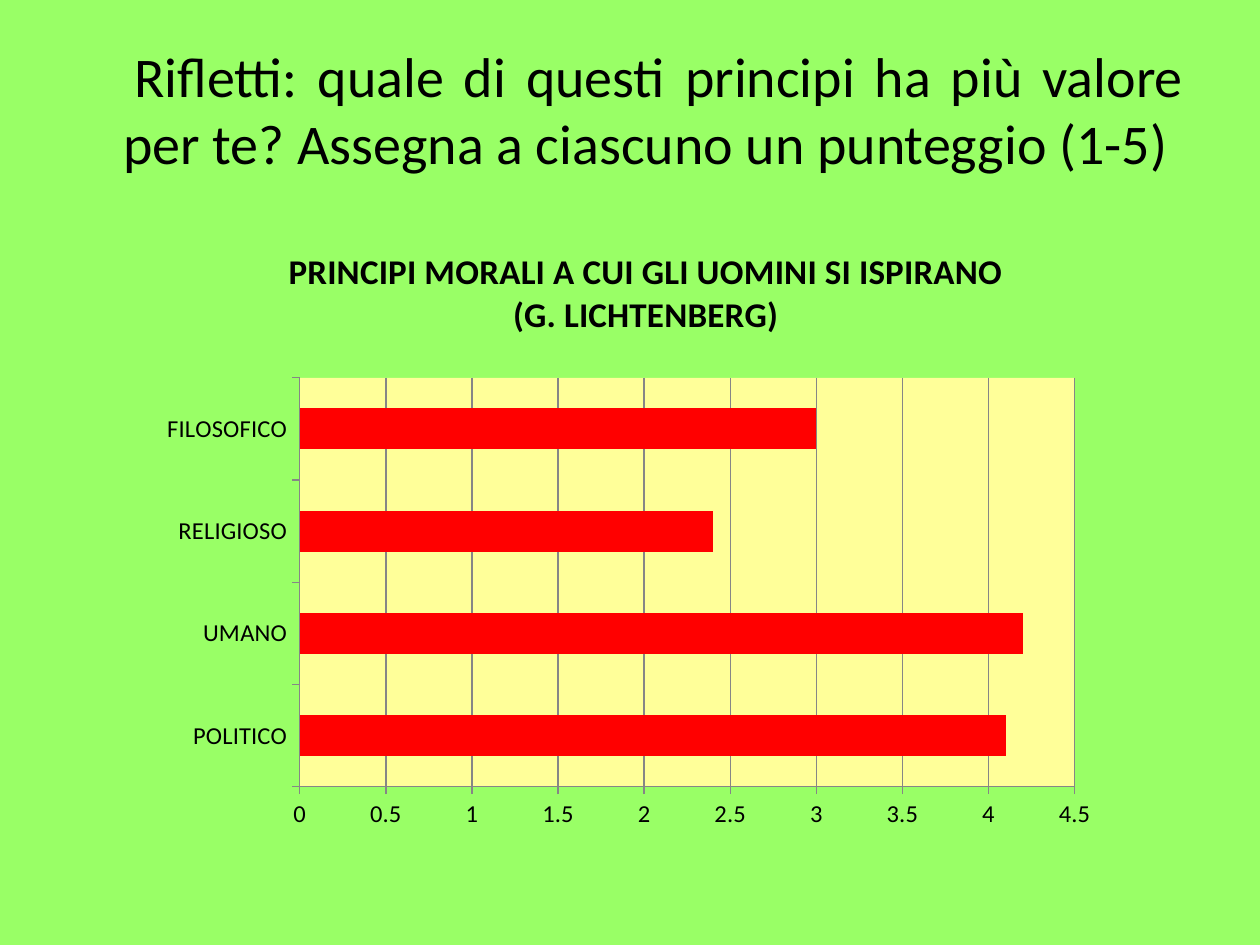
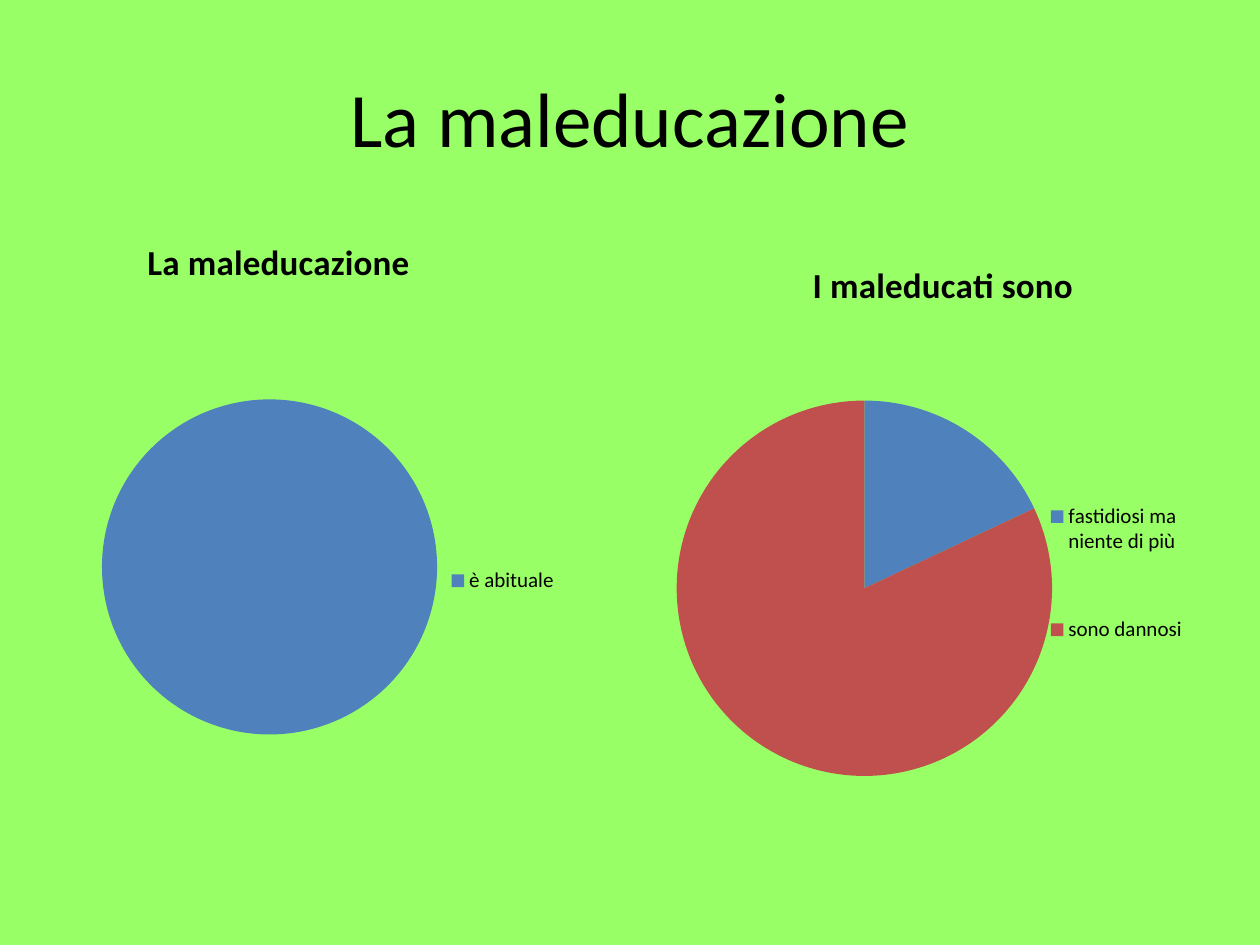
from lxml.etree import SubElement
from pptx import Presentation
from pptx.chart.data import CategoryChartData
from pptx.dml.color import RGBColor
from pptx.enum.chart import XL_CHART_TYPE as ChartType, XL_LEGEND_POSITION as LegendPosition, XL_TICK_MARK as TickMark
from pptx.enum.text import MSO_ANCHOR as Anchor, PP_ALIGN as Align
from pptx.oxml.ns import qn
from pptx.util import Inches, Pt

FONT = "Calibri"
BLACK = RGBColor(0x00, 0x00, 0x00)
GREEN = RGBColor(0x99, 0xFF, 0x66)
YELLOW = RGBColor(0xFF, 0xFF, 0x99)
RED = RGBColor(0xFF, 0x00, 0x00)
GREY = RGBColor(0x86, 0x86, 0x86)
SLICE_COLORS = [RGBColor(0x4F, 0x81, 0xBD), RGBColor(0xC0, 0x50, 0x4D)]


def add_slide(presentation):
    slide = presentation.slides.add_slide(presentation.slide_layouts[6])
    slide.background.fill.solid()
    slide.background.fill.fore_color.rgb = GREEN
    return slide


def style_font(font, size, bold=False):
    font.name = FONT
    font.size = Pt(size)
    font.bold = bold
    font.color.rgb = BLACK


def add_heading(slide, text, box, size, align, anchor):
    frame = slide.shapes.add_textbox(*map(Inches, box)).text_frame
    frame.word_wrap = True
    frame.vertical_anchor = anchor
    paragraph = frame.paragraphs[0]
    paragraph.text = text
    paragraph.alignment = align
    style_font(paragraph.font, size)
    return paragraph


def set_layout(chart, tag, frame, place):
    part = chart.element.find(".//" + qn(tag))
    for old in part.findall(qn("c:layout")):
        part.remove(old)
    layout = part.makeelement(qn("c:layout"))
    overlay = part.find(qn("c:overlay"))
    if overlay is None:
        part.insert(0, layout)
    else:
        overlay.addprevious(layout)
    manual = SubElement(layout, qn("c:manualLayout"))
    left, top, width, height = frame
    settings = []
    if tag == "c:plotArea":
        settings.append(("layoutTarget", "inner"))
    settings += [("xMode", "edge"), ("yMode", "edge")]
    offsets = (place[0] - left, place[1] - top, *place[2:])
    for name, length, total in zip("xywh", offsets, (width, height, width, height)):
        settings.append((name, f"{length / total:.4f}"))
    for name, value in settings:
        SubElement(manual, qn("c:" + name)).set("val", value)


def add_chart(slide, kind, frame, title, values, plot_box, title_place=None):
    data = CategoryChartData()
    data.categories = list(values)
    data.add_series("Series 1", list(values.values()))
    chart = slide.shapes.add_chart(kind, *map(Inches, frame), data).chart
    style_font(chart.font, 10)
    chart.has_legend = False
    chart.has_title = True
    title_frame = chart.chart_title.text_frame
    title_frame.text = title
    style_font(title_frame.paragraphs[0].font, 20, bold=True)
    set_layout(chart, "c:plotArea", frame, plot_box)
    if title_place:
        set_layout(chart, "c:title", frame, title_place)
    return chart


def fill_plot_area(chart, color):
    plot_area = chart.element.find(".//" + qn("c:plotArea"))
    properties = SubElement(plot_area, qn("c:spPr"))
    fill = SubElement(properties, qn("a:solidFill"))
    SubElement(fill, qn("a:srgbClr")).set("val", str(color))


def add_bar_chart(slide, frame, title, values, plot_box, title_place):
    chart = add_chart(slide, ChartType.BAR_CLUSTERED, frame, title, values, plot_box, title_place)
    plot = chart.plots[0]
    plot.gap_width = 150
    plot.vary_by_categories = False
    fill = plot.series[0].format.fill
    fill.solid()
    fill.fore_color.rgb = RED
    for axis in (chart.category_axis, chart.value_axis):
        style_font(axis.tick_labels.font, 14)
        axis.major_tick_mark = TickMark.OUTSIDE
        axis.minor_tick_mark = TickMark.NONE
        axis.format.line.color.rgb = GREY
    axis = chart.value_axis
    axis.minimum_scale, axis.maximum_scale, axis.major_unit = 0, 4.5, 0.5
    axis.has_major_gridlines = True
    axis.major_gridlines.format.line.color.rgb = GREY
    fill_plot_area(chart, YELLOW)


def add_pie_chart(slide, frame, title, values, plot_box, legend_box, title_place=None):
    chart = add_chart(slide, ChartType.PIE, frame, title, values, plot_box, title_place)
    chart.plots[0].vary_by_categories = True
    chart.has_legend = True
    chart.legend.position = LegendPosition.RIGHT
    chart.legend.include_in_layout = False
    style_font(chart.legend.font, 12)
    set_layout(chart, "c:legend", frame, legend_box)
    points = chart.plots[0].series[0].points
    for index, color in enumerate(SLICE_COLORS[:len(values)]):
        fill = points[index].format.fill
        fill.solid()
        fill.fore_color.rgb = color


def build_principles(presentation):
    slide = add_slide(presentation)
    question = add_heading(
        slide,
        "Rifletti: quale di questi principi ha più valore per te? Assegna a ciascuno un punteggio (1-5)",
        (0.5, 0.28, 9, 6.41), 32, Align.JUSTIFY, Anchor.TOP)
    properties = question._p.get_or_add_pPr()
    properties.set("marL", str(Inches(0.38)))
    properties.set("indent", str(Inches(0.09)))
    add_bar_chart(
        slide, (1.3, 1.86, 7.4, 4.72),
        "PRINCIPI MORALI A CUI GLI UOMINI SI ISPIRANO (G. LICHTENBERG)",
        {"POLITICO": 4.1, "UMANO": 4.2, "RELIGIOSO": 2.4, "FILOSOFICO": 3},
        plot_box=(2.38, 3.01, 6.15, 3.28), title_place=(2.24, 1.91))


def build_rudeness(presentation):
    slide = add_slide(presentation)
    add_heading(slide, "La maleducazione", (0.5, 0.3, 9, 1.25), 44, Align.CENTER, Anchor.MIDDLE)
    add_pie_chart(
        slide, (0.67, 1.7, 3.94, 5), "La maleducazione", {"è abituale": 100},
        plot_box=(0.81, 3.17, 2.66, 2.66), legend_box=(3.48, 4.46, 1.02, 0.3),
        title_place=(1.12, 1.83))
    add_pie_chart(
        slide, (5.24, 1.86, 4.49, 4.96), "I maleducati sono",
        {"fastidiosi ma niente di più": 18, "sono dannosi": 82},
        plot_box=(5.37, 3.18, 2.98, 2.98), legend_box=(8.21, 3.5, 1.3, 2.1))


def main():
    presentation = Presentation()
    presentation.slide_width = Inches(10)
    presentation.slide_height = Inches(7.5)
    build_principles(presentation)
    build_rudeness(presentation)
    presentation.save("out.pptx")


if __name__ == "__main__":
    main()
